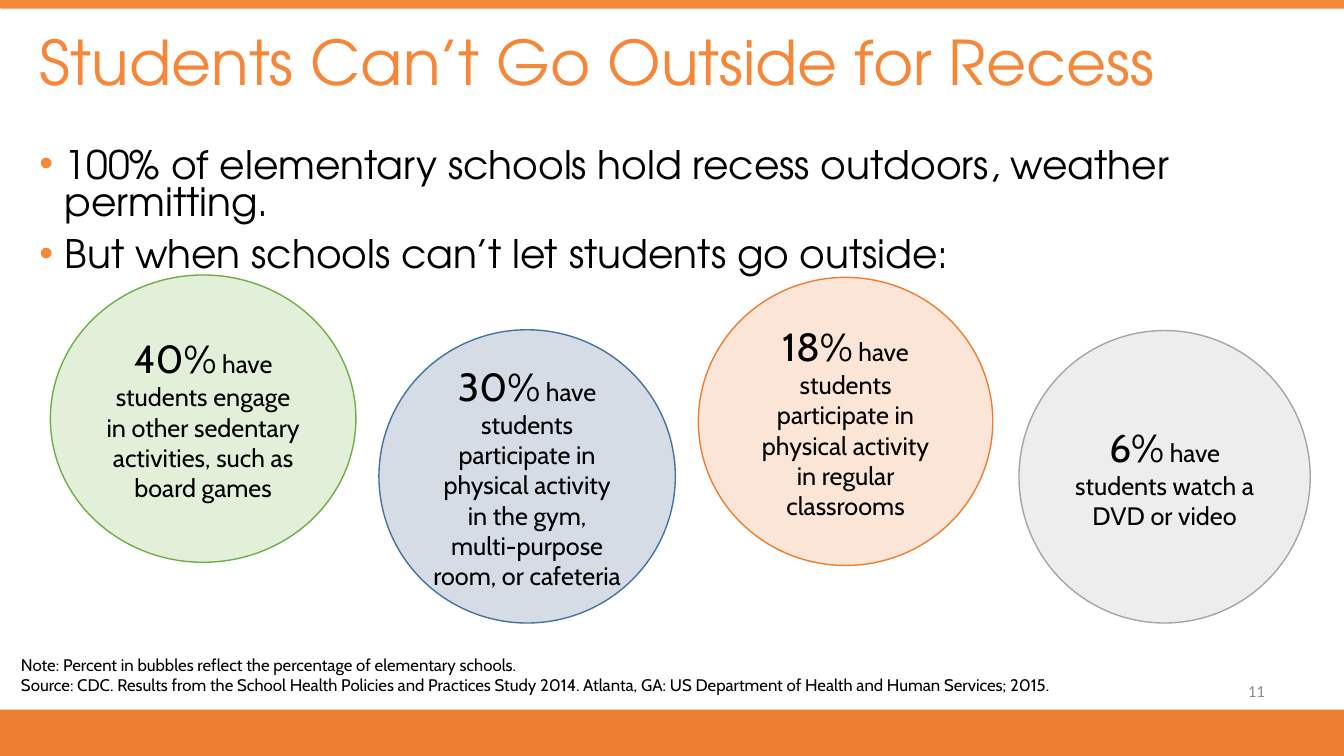
"""Build the slide on indoor recess activities in elementary schools."""
import dataclasses
from typing import Any

import lxml.etree
import pptx
import pptx.dml.color
import pptx.enum.shapes
import pptx.enum.text
import pptx.oxml
import pptx.oxml.ns
import pptx.util

Cm = pptx.util.Cm
Pt = pptx.util.Pt
Shapes = pptx.enum.shapes.MSO_SHAPE
Align = pptx.enum.text.PP_ALIGN
Anchor = pptx.enum.text.MSO_ANCHOR
ORANGE = "F68638"
BLACK = "000000"
HEADING_FONT = "TeX Gyre Adventor"
TEXT_FONT = "Cabin"


@dataclasses.dataclass(frozen=True)
class Place:
    left: float
    top: float
    width: float
    height: float


@dataclasses.dataclass(frozen=True)
class Span:
    text: str
    size: float
    font: str = TEXT_FONT
    color: str = BLACK


@dataclasses.dataclass(frozen=True)
class Bar:
    kind: Any
    place: Place
    fill: str


@dataclasses.dataclass(frozen=True)
class Bubble:
    share: str
    activity: str
    place: Place
    fill: str
    line: str


BARS = [
    Bar(Shapes.RECTANGLE, Place(0, 17.88, 33.87, 1.17), "ED7D31"),
    Bar(Shapes.ROUNDED_RECTANGLE, Place(0, -0.03, 34.21, 0.25), ORANGE),
]
BUBBLES = [
    Bubble("30%", "participate in physical activity in the gym, multi-purpose room, or cafeteria",
           Place(9.55, 8.31, 7.47, 7.39), "D6DCE5", "43739E"),
    Bubble("18%", "participate in physical activity in regular classrooms",
           Place(17.6, 6.99, 7.42, 7.26), "FBE5D6", "ED7D31"),
    Bubble("40%", "engage in other sedentary activities, such as board games",
           Place(1.27, 6.93, 7.7, 7.24), "E2F0D9", "70AD47"),
    Bubble("6%", "watch a DVD or video",
           Place(25.68, 8.33, 7.34, 7.37), "EDEDED", "A5A5A5"),
]
TITLE = "Students Can’t Go Outside for Recess"
POINTS = [
    "100% of elementary schools hold recess outdoors, weather permitting.",
    "But when schools can’t let students go outside:",
]
NOTES = [
    "Note: Percent in bubbles reflect the percentage of elementary schools.",
    "Source: CDC. Results from the School Health Policies and Practices Study 2014. "
    "Atlanta, GA: US Department of Health and Human Services; 2015.",
]


def color(value: str) -> Any:
    return pptx.dml.color.RGBColor.from_string(value)


def apply(target: Any, values: dict[str, Any]) -> None:
    for name, value in values.items():
        setattr(target, name, value)


def lengths(place: Place) -> dict[str, Any]:
    return {name: Cm(value) for name, value in dataclasses.asdict(place).items()}


def write(box: Any, lines: list[list[Span]], frame_format: dict[str, Any],
          para_format: dict[str, Any]) -> None:
    frame = box.text_frame
    apply(frame, {"word_wrap": True, "auto_size": pptx.enum.text.MSO_AUTO_SIZE.NONE} | frame_format)
    for index, spans in enumerate(lines):
        para = frame.add_paragraph() if index else frame.paragraphs[0]
        apply(para, para_format)
        for span in spans:
            run = para.add_run()
            run.text = span.text
            apply(run.font, {"size": Pt(span.size), "name": span.font})
            run.font.color.rgb = color(span.color)


def add_figure(page: Any, kind: Any, place: Place, fill: str) -> Any:
    box = page.shapes.add_shape(kind, **lengths(place))
    box.shadow.inherit = False
    box.fill.solid()
    box.fill.fore_color.rgb = color(fill)
    box.line.fill.background()
    return box


def add_text(page: Any, place: Place, lines: list[list[Span]],
             frame_format: dict[str, Any], para_format: dict[str, Any]) -> None:
    box = page.shapes.add_textbox(**lengths(place))
    write(box, lines, frame_format, para_format)


def add_bubble(page: Any, bubble: Bubble) -> None:
    box = add_figure(page, Shapes.OVAL, bubble.place, bubble.fill)
    box.line.color.rgb = color(bubble.line)
    box.line.width = Pt(1)
    spans = [Span(bubble.share, 28), Span(f" have students {bubble.activity}", 18)]
    write(box, [spans], {"vertical_anchor": Anchor.MIDDLE}, {"alignment": Align.CENTER})


def add_text_shadow(box: Any) -> None:
    effect = pptx.oxml.parse_xml(
        f'<a:effectLst {pptx.oxml.ns.nsdecls("a")}>'
        '<a:outerShdw blurRad="38100" dist="38100" dir="2700000" algn="tl">'
        '<a:srgbClr val="000000"><a:alpha val="43000"/></a:srgbClr>'
        '</a:outerShdw></a:effectLst>')
    fill = box.text_frame.paragraphs[0].runs[0].font._element.find(pptx.oxml.ns.qn("a:solidFill"))
    fill.addnext(effect)


def add_bullets(box: Any) -> None:
    tag = pptx.oxml.ns.qn
    for para in box.text_frame.paragraphs:
        properties = para._p.get_or_add_pPr()
        properties.set("marL", str(Cm(0.64)))
        properties.set("indent", str(-Cm(0.64)))
        tint = lxml.etree.SubElement(properties, tag("a:buClr"))
        lxml.etree.SubElement(tint, tag("a:srgbClr"), val=ORANGE)
        lxml.etree.SubElement(properties, tag("a:buFont"), typeface="Arial")
        lxml.etree.SubElement(properties, tag("a:buChar"), char="•")


def main() -> None:
    deck = pptx.Presentation()
    apply(deck, {"slide_width": Cm(33.87), "slide_height": Cm(19.05)})
    page = deck.slides.add_slide(deck.slide_layouts[1])
    for bar in BARS:
        add_figure(page, bar.kind, bar.place, bar.fill)

    title, body = page.shapes.title, page.placeholders[1]
    apply(title, lengths(Place(0.74, -0.2, 28.73, 3.68)))
    write(title, [[Span(TITLE, 44, HEADING_FONT, ORANGE)]],
          {"vertical_anchor": Anchor.MIDDLE}, {"alignment": Align.LEFT, "line_spacing": 0.9})
    add_text_shadow(title)
    apply(body, lengths(Place(0.74, 3.63, 32.72, 2.67)))
    write(body, [[Span(point, 28, HEADING_FONT)] for point in POINTS],
          {"vertical_anchor": Anchor.TOP}, {"line_spacing": 0.8, "space_before": Pt(10)})
    add_bullets(body)

    for bubble in BUBBLES:
        add_bubble(page, bubble)
    add_text(page, Place(0.28, 16.38, 32.13, 1.27), [[Span(note, 12)] for note in NOTES],
             {"vertical_anchor": Anchor.TOP}, {"alignment": Align.LEFT})
    add_text(page, Place(24.51, 16.89, 7.62, 1.02), [[Span("11", 12, "Calibri", "8C8C8C")]],
             {"vertical_anchor": Anchor.MIDDLE}, {"alignment": Align.RIGHT})
    deck.save("out.pptx")


if __name__ == "__main__":
    main()
